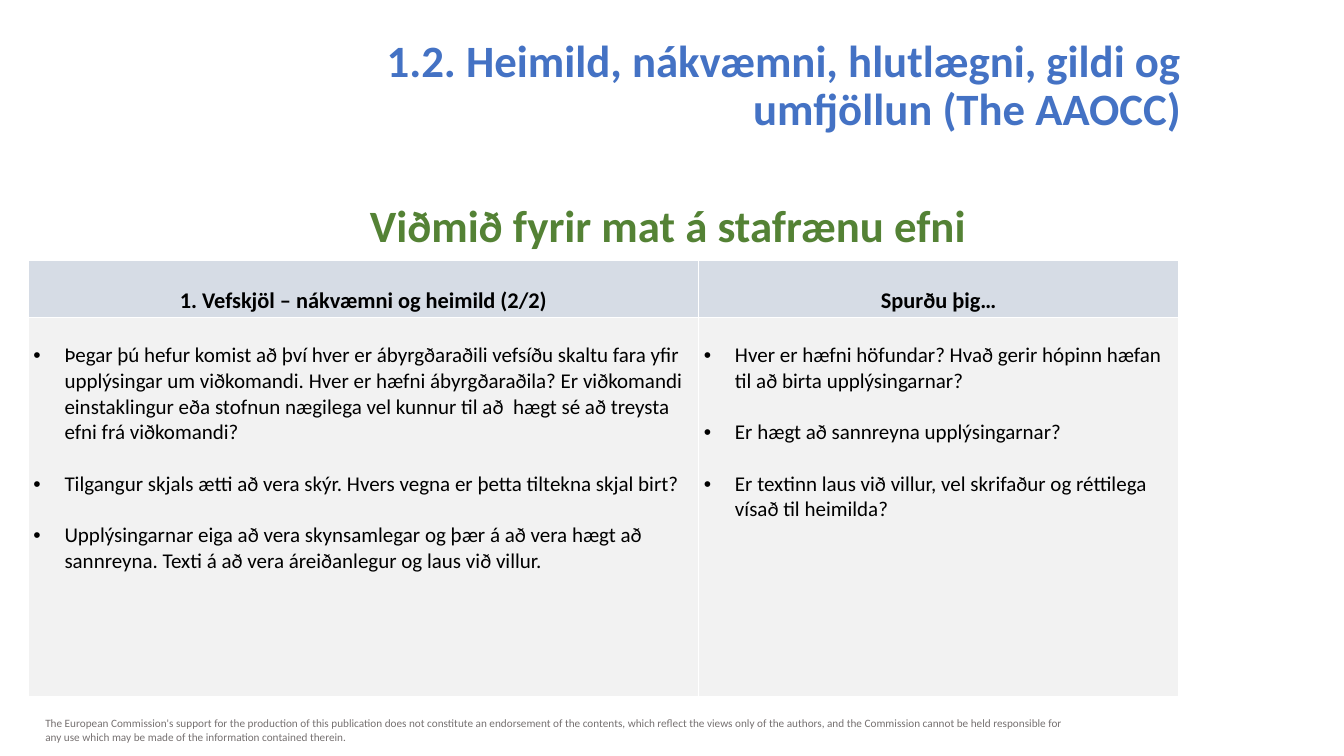
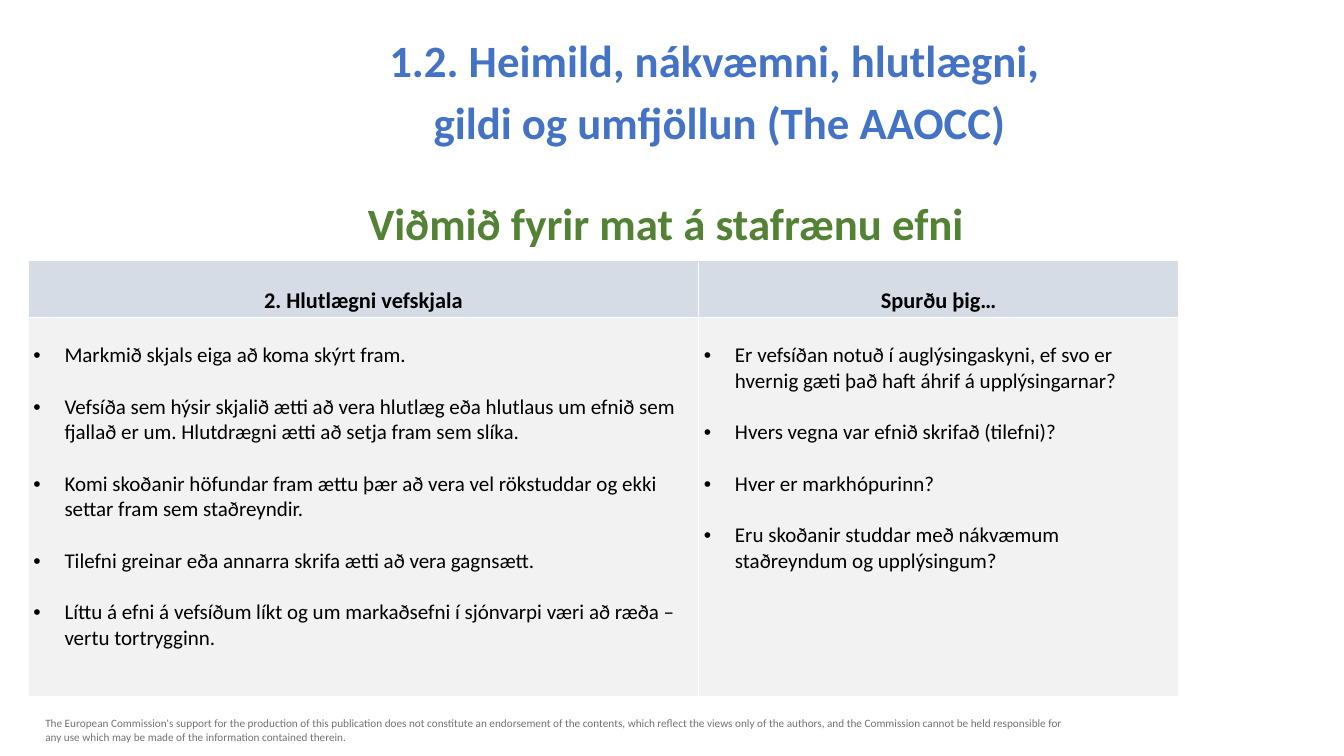
from dataclasses import dataclass
from itertools import product

from lxml.etree import SubElement
from pptx import Presentation
from pptx.dml.color import RGBColor
from pptx.enum.text import MSO_ANCHOR, MSO_AUTO_SIZE, PP_ALIGN
from pptx.oxml.ns import qn
from pptx.util import Emu, Inches, Pt


@dataclass(frozen=True)
class Theme:
    """Colours, type sizes (points) and cell gaps (inches)."""
    font: str = "Calibri"
    blue: str = "4472C4"
    green: str = "548235"
    gray: str = "767171"
    ink: str = "000000"
    line: str = "FFFFFF"
    head: str = "D6DCE5"
    body: str = "F2F2F2"
    big: float = 32
    mid: float = 16
    text: float = 15
    small: float = 8
    gap: float = 18.3  # one line of body text
    side: float = 0.05
    hang: float = 0.31
    drop: tuple = (0.27, 0.25)  # top margin of head and body cells


@dataclass(frozen=True)
class Box:
    """Place on a grid of 100 columns by 100 rows over the slide."""
    left: float
    top: float
    width: float
    height: float

    def place(self) -> tuple:
        return (across(self.left), down(self.top),
                across(self.width), down(self.height))


@dataclass(frozen=True)
class Page:
    title: str
    align: PP_ALIGN
    sub: Box
    heads: tuple
    lists: tuple


THEME = Theme()
WIDE, HIGH = Inches(13.33), Inches(7.5)
TITLE = Box(18.45, 4.4, 70.2, 16)
FOOT = Box(2.63, 94.13, 78.47, 4.93)
GRID = Box(2.1, 34.4, 85.6, 57.8)
COLS = (49.89, 35.71)
ROWS = (7.6, 50.2)

SUB = "Viðmið fyrir mat á stafrænu efni"
ASK = "Spurðu þig…"
NOTE = (
    "The European Commission's support for the production of this publication "
    "does not constitute an endorsement of the contents, which reflect the "
    "views only of the authors, and the Commission cannot be held responsible "
    "for any use which may be made of the information contained therein."
)

PAGES = (
    Page(
        "1.2. Heimild, nákvæmni, hlutlægni, gildi og umfjöllun (The AAOCC)",
        PP_ALIGN.RIGHT,
        Box(26.78, 25.47, 60.3, 8.53),
        ("1. Vefskjöl – nákvæmni og heimild (2/2)", ASK),
        (
            (
                "Þegar þú hefur komist að því hver er ábyrgðaraðili vefsíðu "
                "skaltu fara yfir upplýsingar um viðkomandi. Hver er hæfni "
                "ábyrgðaraðila? Er viðkomandi einstaklingur eða stofnun "
                "nægilega vel kunnur til að  hægt sé að treysta efni frá "
                "viðkomandi?",
                "Tilgangur skjals ætti að vera skýr. Hvers vegna er þetta "
                "tiltekna skjal birt?",
                "Upplýsingarnar eiga að vera skynsamlegar og þær á að vera "
                "hægt að sannreyna. Texti á að vera áreiðanlegur og laus við "
                "villur.",
            ),
            (
                "Hver er hæfni höfundar? Hvað gerir hópinn hæfan til að birta "
                "upplýsingarnar?",
                "Er hægt að sannreyna upplýsingarnar?",
                "Er textinn laus við villur, vel skrifaður og réttilega vísað "
                "til heimilda?",
            ),
        ),
    ),
    Page(
        "1.2. Heimild, nákvæmni, hlutlægni, \ngildi og umfjöllun (The AAOCC)",
        PP_ALIGN.CENTER,
        Box(26.63, 25.2, 60.3, 8.53),
        ("2. Hlutlægni vefskjala", ASK),
        (
            (
                "Markmið skjals eiga að koma skýrt fram.",
                "Vefsíða sem hýsir skjalið ætti að vera hlutlæg eða hlutlaus "
                "um efnið sem fjallað er um. Hlutdrægni ætti að setja fram "
                "sem slíka.",
                "Komi skoðanir höfundar fram ættu þær að vera vel rökstuddar "
                "og ekki settar fram sem staðreyndir.",
                "Tilefni greinar eða annarra skrifa ætti að vera gagnsætt.",
                "Líttu á efni á vefsíðum líkt og um markaðsefni í sjónvarpi "
                "væri að ræða – vertu tortrygginn.",
            ),
            (
                "Er vefsíðan notuð í auglýsingaskyni, ef svo er hvernig gæti "
                "það haft áhrif á upplýsingarnar?",
                "Hvers vegna var efnið skrifað (tilefni)?",
                "Hver er markhópurinn?",
                "Eru skoðanir studdar með nákvæmum staðreyndum og "
                "upplýsingum?",
            ),
        ),
    ),
)


def across(share: float) -> Emu:
    return Emu(round(WIDE * share / 100))


def down(share: float) -> Emu:
    return Emu(round(HIGH * share / 100))


def write(frame, text: str, size: float, color: str, bold: bool = False,
          align: PP_ALIGN = PP_ALIGN.LEFT, gap: float = 0) -> None:
    """Fill a frame; the gap goes between its paragraphs."""
    frame.text = text
    frame.word_wrap = True
    for i, para in enumerate(frame.paragraphs):
        para.alignment = align
        para.space_before = Pt(gap if i else 0)
        for run in para.runs:
            font = run.font
            font.name, font.size, font.bold = THEME.font, Pt(size), bold
            font.color.rgb = RGBColor.from_string(color)


def add_text(slide, box: Box, text: str, size: float, color: str,
             bold: bool = False):
    shape = slide.shapes.add_textbox(*box.place())
    write(shape.text_frame, text, size, color, bold)
    return shape


def add_title(slide, page: Page) -> None:
    shape = slide.shapes.title
    shape.left, shape.top, shape.width, shape.height = TITLE.place()
    frame = shape.text_frame
    write(frame, page.title, THEME.big, THEME.blue, True, page.align, 10)
    frame.auto_size = MSO_AUTO_SIZE.NONE
    frame.vertical_anchor = MSO_ANCHOR.TOP
    for para in frame.paragraphs:
        para.line_spacing = 0.9


def add_foot(slide, layout) -> None:
    """Write the footer, then hand it to the layout all slides share."""
    foot = add_text(slide, FOOT, NOTE, THEME.small, THEME.gray).element
    foot.nvSpPr.cNvPr.set("id", "20")
    layout.shapes.element.append(foot)


def bullet(para) -> None:
    props = para._p.get_or_add_pPr()
    hang = Inches(THEME.hang)
    props.set("marL", str(hang))
    props.set("indent", str(-hang))
    SubElement(props, qn("a:buFont")).set("typeface", "Arial")
    SubElement(props, qn("a:buChar")).set("char", "•")


def style(cell, fill: str, drop: float) -> None:
    """Set margins, white borders and fill of a cell."""
    cell.margin_left = cell.margin_right = Inches(THEME.side)
    cell.margin_top, cell.margin_bottom = Inches(drop), 0
    props = cell._tc.get_or_add_tcPr()
    for side in ("lnL", "lnR", "lnT", "lnB"):
        line = SubElement(props, qn(f"a:{side}"), w=str(Pt(1)))
        solid = SubElement(line, qn("a:solidFill"))
        SubElement(solid, qn("a:srgbClr"), val=THEME.line)
    cell.fill.solid()
    cell.fill.fore_color.rgb = RGBColor.from_string(fill)


def add_grid(slide, page: Page) -> None:
    size = len(ROWS), len(COLS)
    table = slide.shapes.add_table(*size, *GRID.place()).table
    table.first_row = table.horz_banding = False
    for col, share in zip(table.columns, COLS):
        col.width = across(share)
    for row, share in zip(table.rows, ROWS):
        row.height = down(share)
    fills = THEME.head, THEME.body
    for r, c in product(range(size[0]), range(size[1])):
        style(table.cell(r, c), fills[r], THEME.drop[r])
    for c, (head, items) in enumerate(zip(page.heads, page.lists)):
        write(table.cell(0, c).text_frame, head, THEME.mid, THEME.ink,
              True, PP_ALIGN.CENTER)
        frame = table.cell(1, c).text_frame
        write(frame, "\n".join(items), THEME.text, THEME.ink, gap=THEME.gap)
        for para in frame.paragraphs:
            bullet(para)


def main() -> None:
    deck = Presentation()
    deck.slide_width, deck.slide_height = WIDE, HIGH
    layout = deck.slide_layouts.get_by_name("Title Only")
    for i, page in enumerate(PAGES):
        slide = deck.slides.add_slide(layout)
        if i == 0:
            add_foot(slide, layout)
        add_title(slide, page)
        add_text(slide, page.sub, SUB, THEME.big, THEME.green, True)
        add_grid(slide, page)
    deck.save("out.pptx")


if __name__ == "__main__":
    main()
